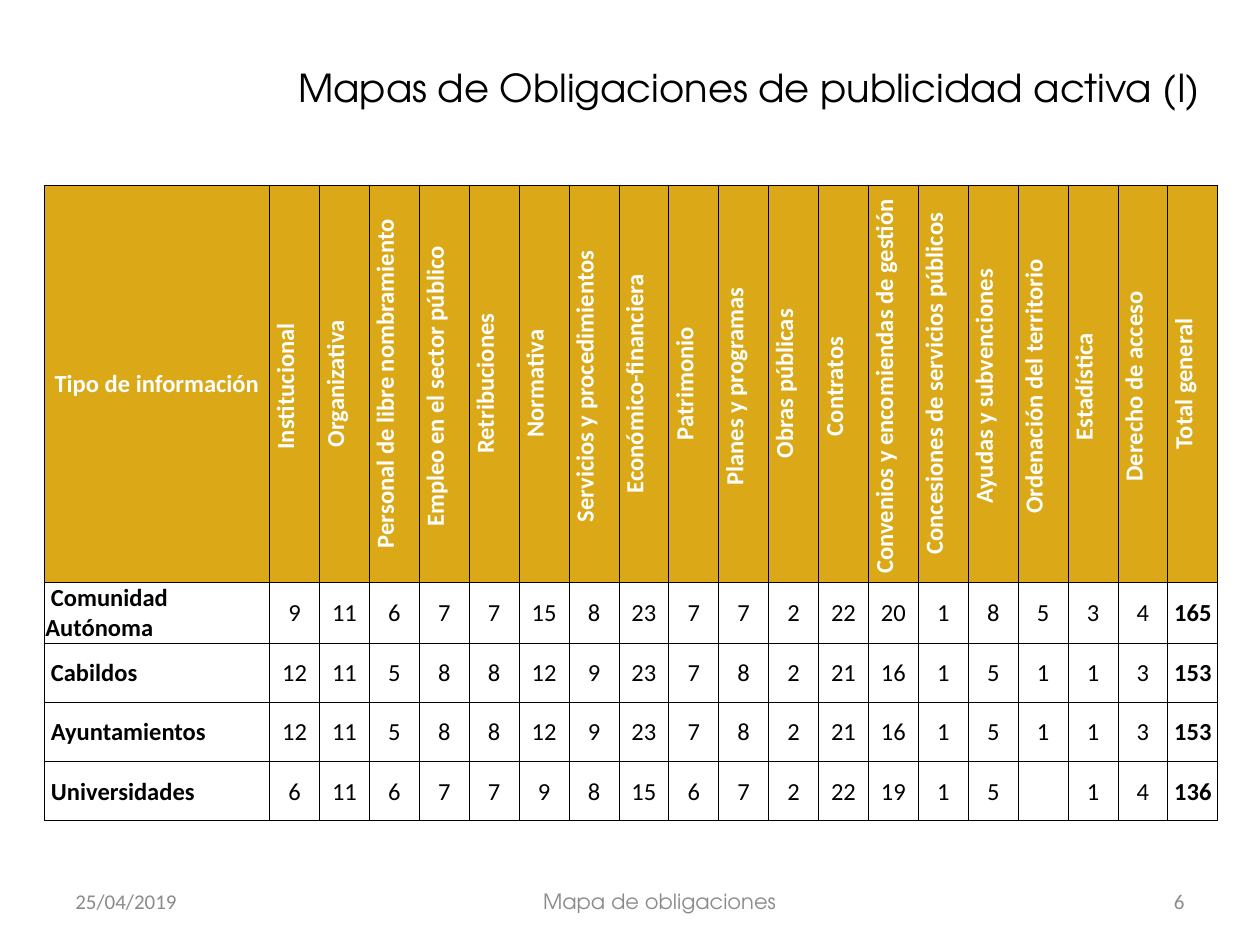
from lxml import etree
from pptx import Presentation
from pptx.dml.color import RGBColor
from pptx.enum.text import MSO_ANCHOR, PP_ALIGN
from pptx.oxml.ns import qn
from pptx.util import Inches, Pt

LEFT, CENTER, RIGHT = PP_ALIGN.LEFT, PP_ALIGN.CENTER, PP_ALIGN.RIGHT
MIDDLE = MSO_ANCHOR.MIDDLE
COLORS = {"black": "000000", "white": "FFFFFF", "gold": "DBA817", "gray": "8B8B8B"}
BODY_FONT, TITLE_FONT = "Calibri", "TeX Gyre Adventor"


def add_text(tf, text, size=14, font=BODY_FONT, color="black", bold=False, align=CENTER):
    p = tf.paragraphs[0]
    p.alignment = align
    r = p.add_run()
    r.text = text
    r.font.size = Pt(size)
    r.font.name = font
    r.font.bold = bold
    r.font.color.rgb = RGBColor.from_string(COLORS[color])


def add_borders(cell, color="black", width=0.5):
    tc_pr = cell._tc.get_or_add_tcPr()
    for side in ("a:lnL", "a:lnR", "a:lnT", "a:lnB"):
        ln = etree.SubElement(tc_pr, qn(side), w=str(Pt(width)))
        fill = etree.SubElement(ln, qn("a:solidFill"))
        etree.SubElement(fill, qn("a:srgbClr"), val=COLORS[color])


prs = Presentation()
prs.slide_width, prs.slide_height = Inches(10), Inches(7.5)
s = prs.slides.add_slide(prs.slide_layouts[5])

title = s.shapes.title
title.left, title.top = Inches(1.89), Inches(0)
title.width, title.height = Inches(8.11), Inches(1.39)
title.text_frame.vertical_anchor = MIDDLE
add_text(title.text_frame, "Mapas de Obligaciones de publicidad activa (I)",
         size=22, font=TITLE_FONT)

headers = [
    "Tipo de información", "Institucional ", "Organizativa",
    "Personal de libre nombramiento", "Empleo en el sector público ",
    "Retribuciones", "Normativa", "Servicios y procedimientos ",
    "Económico-financiera", "Patrimonio", "Planes y programas ",
    "Obras públicas", "Contratos ", "Convenios y encomiendas de gestión ",
    "Concesiones de servicios públicos", "Ayudas y subvenciones ",
    "Ordenación del territorio ", "Estadística ", "Derecho de acceso ",
    "Total general",
]
rows = [
    headers,
    [" Comunidad Autónoma", 9, 11, 6, 7, 7, 15, 8, 23, 7, 7, 2, 22, 20, 1, 8, 5, 3, 4, 165],
    [" Cabildos", 12, 11, 5, 8, 8, 12, 9, 23, 7, 8, 2, 21, 16, 1, 5, 1, 1, 3, 153],
    [" Ayuntamientos", 12, 11, 5, 8, 8, 12, 9, 23, 7, 8, 2, 21, 16, 1, 5, 1, 1, 3, 153],
    [" Universidades", 6, 11, 6, 7, 7, 9, 8, 15, 6, 7, 2, 22, 19, 1, 5, "", 1, 4, 136],
]
last = len(headers) - 1
table_width, label_width = 9.32, 1.79
table = s.shapes.add_table(len(rows), len(headers), Inches(0.35), Inches(1.47),
                           Inches(table_width), Inches(5.02)).table
table.first_row = table.horz_banding = False
for j, column in enumerate(table.columns):
    column.width = Inches(label_width if j == 0 else (table_width - label_width) / last)

for i, values in enumerate(rows):
    header = i == 0
    table.rows[i].height = Inches(3.15 if header else 0.47)
    for j, value in enumerate(values):
        cell = table.cell(i, j)
        cell.vertical_anchor = MIDDLE
        cell.margin_left = cell.margin_top = cell.margin_right = Inches(0.01)
        cell.margin_bottom = Inches(0)
        add_borders(cell)
        if header:
            cell.fill.solid()
            cell.fill.fore_color.rgb = RGBColor.from_string(COLORS["gold"])
            if j > 0:
                cell._tc.tcPr.set("vert", "vert270")
        else:
            cell.fill.background()
        if value != "":
            add_text(cell.text_frame, str(value),
                     color="white" if header else "black",
                     bold=header or j in (0, last),
                     align=LEFT if j == 0 and not header else CENTER)

footers = [
    ("25/04/2019", 0.5, 1.03, BODY_FONT, LEFT),
    ("Mapa de obligaciones", 1.85, 6.77, TITLE_FONT, CENTER),
    ("6", 8.94, 0.56, BODY_FONT, RIGHT),
]
for text, left, width, font, align in footers:
    tf = s.shapes.add_textbox(Inches(left), Inches(6.95), Inches(width), Inches(0.4)).text_frame
    tf.word_wrap = True
    tf.vertical_anchor = MIDDLE
    add_text(tf, text, size=12, font=font, color="gray", align=align)

prs.save("out.pptx")
